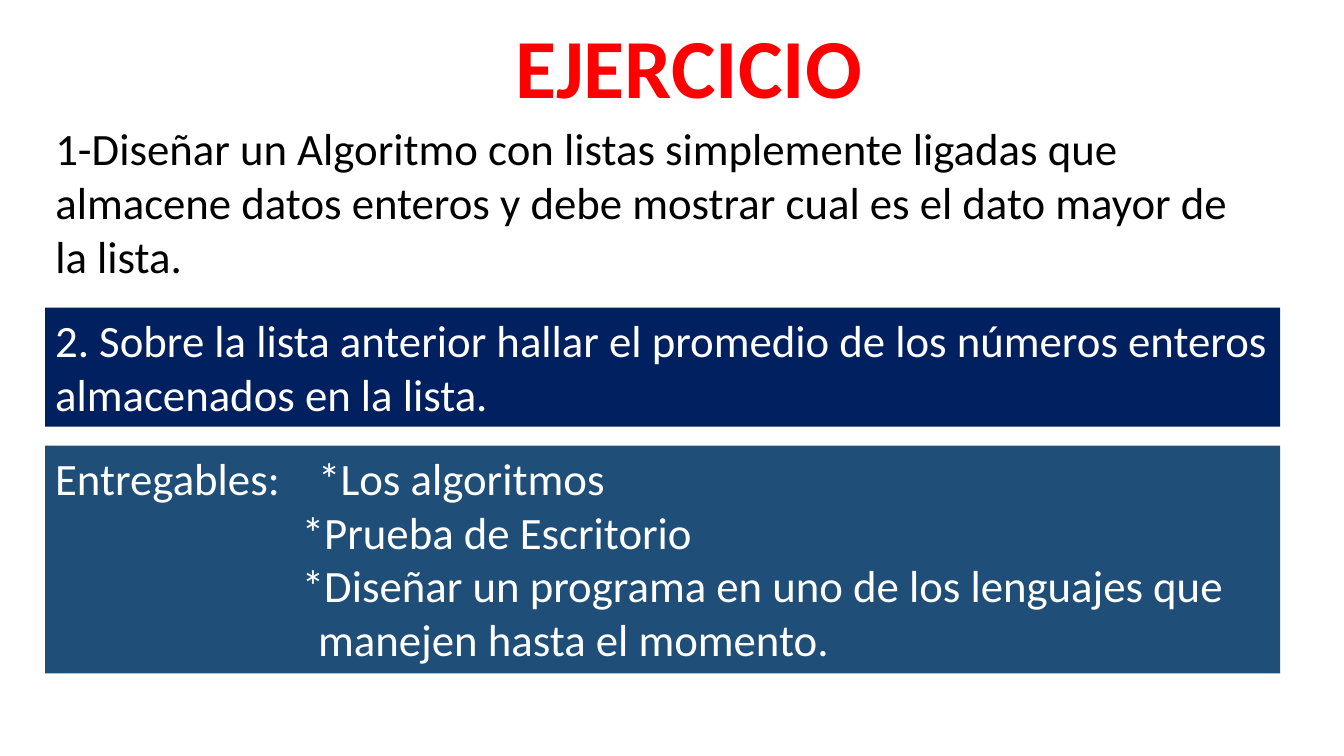
from dataclasses import dataclass
from pptx import Presentation
from pptx.dml.color import RGBColor as RGB
from pptx.enum.shapes import MSO_SHAPE as Shape
from pptx.enum.text import MSO_ANCHOR as Anchor, MSO_AUTO_SIZE as Fit, PP_ALIGN as Align
from pptx.oxml.xmlchemy import OxmlElement as Node
from pptx.util import Cm, Pt


@dataclass(frozen=True)
class Theme:
    font: str = "Calibri"
    title: int = 60
    body: int = 32
    red: str = "FF0000"
    black: str = "000000"
    white: str = "FFFFFF"
    navy: str = "002060"
    steel: str = "1F4E79"


THEME = Theme()
LEFT, WIDTH = 1.14, 31.12
STAR, TEXT = 6.22, 6.63


def place(shape, box):
    shape.left, shape.top, shape.width, shape.height = map(Cm, box)


def indent(para, margin, first, tab):
    props = para._p.get_or_add_pPr()
    props.set("marL", str(Cm(margin)))
    props.set("indent", str(Cm(first)))
    props.append(Node("a:buNone"))
    if tab:
        tabs, stop = Node("a:tabLst"), Node("a:tab")
        stop.set("pos", str(Cm(tab)))
        stop.set("algn", "l")
        tabs.append(stop)
        props.append(tabs)


def write(shape, lines, size=THEME.body, color=THEME.black, bold=False,
          margin=0, firsts=(0,), tab=None):
    frame = shape.text_frame
    frame.word_wrap = True
    frame.auto_size = Fit.NONE
    frame.vertical_anchor = Anchor.TOP
    frame.text = "\n".join(lines)
    for para, first in zip(frame.paragraphs, firsts):
        para.alignment = Align.LEFT
        para.line_spacing = 1.0
        para.space_before = Pt(0)
        indent(para, margin, first, tab)
        for run in para.runs:
            font = run.font
            font.name, font.size, font.bold = THEME.font, Pt(size), bold
            font.color.rgb = RGB.from_string(color)


def head(slide, box):
    title = slide.shapes.title
    place(title, box)
    write(title, ["EJERCICIO"], size=THEME.title, color=THEME.red, bold=True)


def task(slide, box):
    body = slide.placeholders[1]
    place(body, box)
    write(body, ["1-Diseñar un Algoritmo con listas simplemente ligadas que "
                 "almacene datos enteros y debe mostrar cual es el dato mayor de la lista."])


def panel(slide, box, fill, lines, **style):
    rect = slide.shapes.add_shape(Shape.RECTANGLE, *map(Cm, box))
    rect.shadow.inherit = False
    rect.fill.solid()
    rect.fill.fore_color.rgb = RGB.from_string(fill)
    rect.line.fill.background()
    write(rect, lines, color=THEME.white, **style)


def main():
    deck = Presentation()
    deck.slide_width, deck.slide_height = Cm(33.87), Cm(19.05)
    slide = deck.slides.add_slide(deck.slide_layouts[1])
    head(slide, (12.73, 0.25, 10.9, 2.82))
    task(slide, (LEFT, 2.92, WIDTH, 4.37))
    panel(slide, (LEFT, 7.75, WIDTH, 3), THEME.navy,
          ["2. Sobre la lista anterior hallar el promedio de los números enteros "
           "almacenados en la lista."])
    panel(slide, (LEFT, 11.23, WIDTH, 5.74), THEME.steel,
          ["Entregables:\t*Los algoritmos",
           "*Prueba de Escritorio",
           "*Diseñar un programa en uno de los lenguajes que manejen hasta el momento."],
          margin=TEXT, firsts=(-TEXT, STAR - TEXT, STAR - TEXT), tab=STAR)
    deck.save("out.pptx")


if __name__ == "__main__":
    main()
